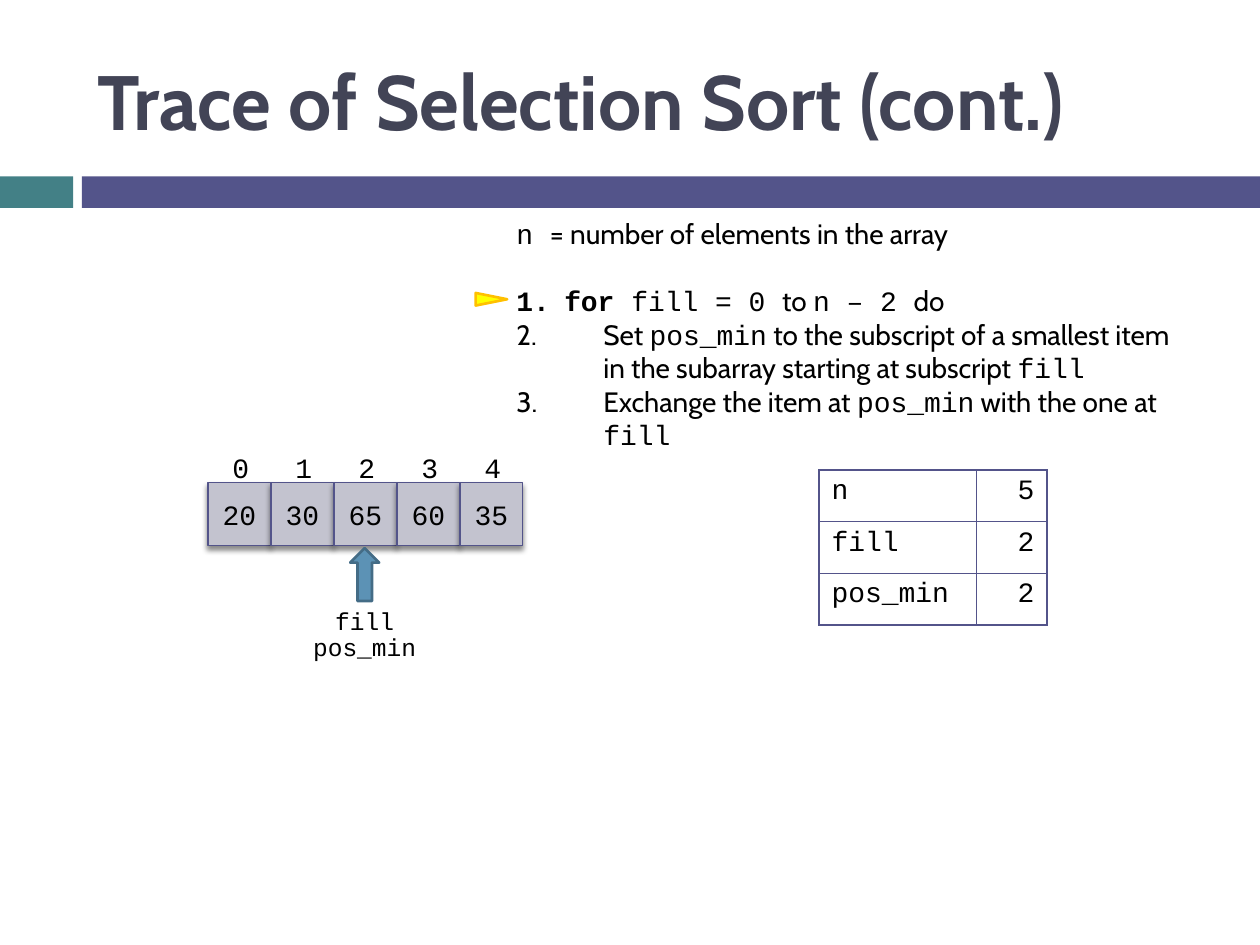
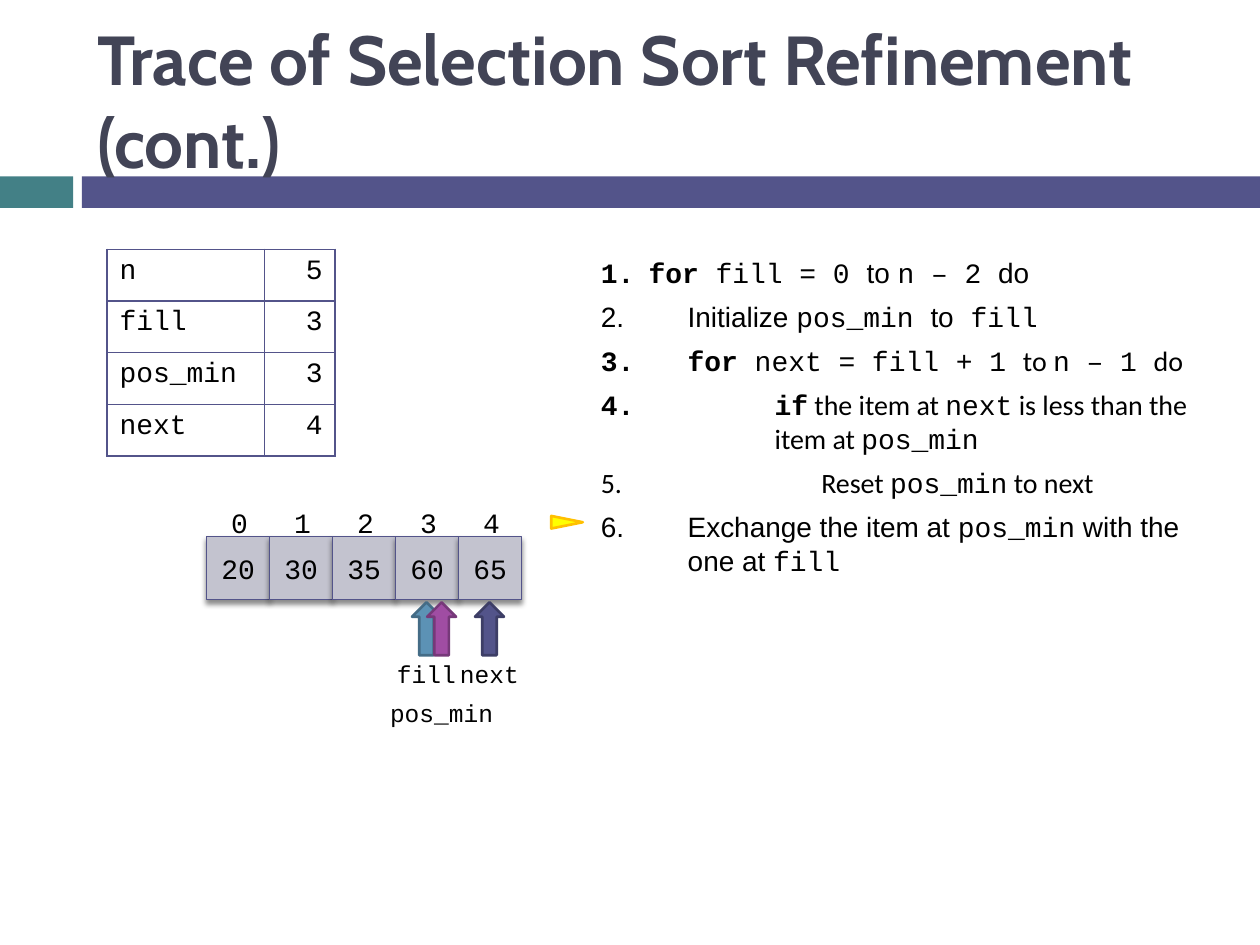
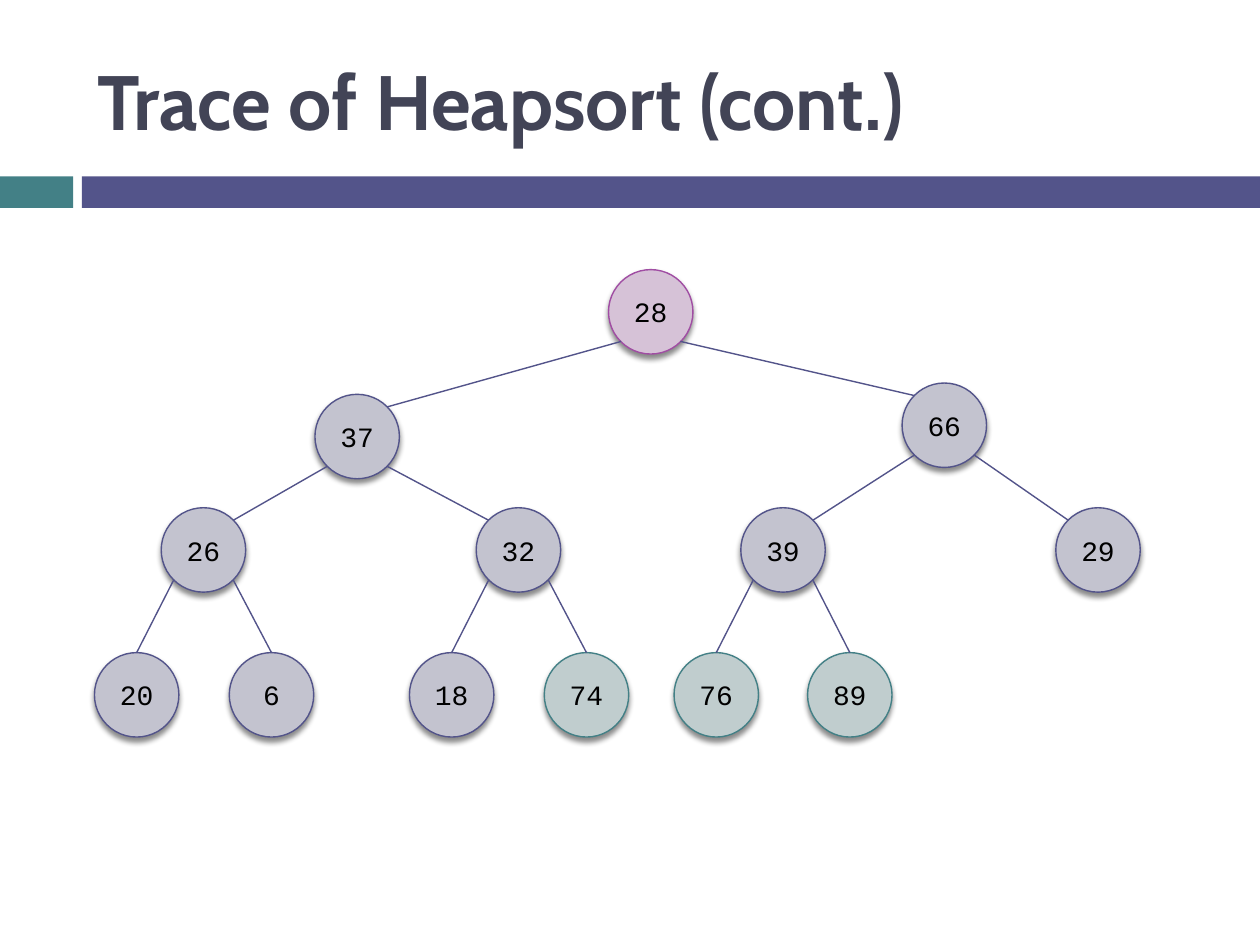
import lxml.etree
import pptx
import pptx.dml.color
import pptx.enum.shapes
import pptx.enum.text
import pptx.oxml.ns
import pptx.util

RGBColor = pptx.dml.color.RGBColor
BLACK = RGBColor(0x00, 0x00, 0x00)
TITLE_COLOR = RGBColor(0x42, 0x44, 0x56)
INDIGO = RGBColor(0x53, 0x54, 0x8A)
INDIGO_DARK = RGBColor(0x3D, 0x3E, 0x66)
INDIGO_PALE = RGBColor(0xC3, 0xC3, 0xCF)
TEAL = RGBColor(0x43, 0x80, 0x86)
TEAL_PALE = RGBColor(0xC0, 0xCD, 0xCE)
PURPLE = RGBColor(0xA0, 0x4D, 0xA3)
PURPLE_DARK = RGBColor(0x76, 0x39, 0x79)
PURPLE_PALE = RGBColor(0xD6, 0xC2, 0xD7)
BLUE = RGBColor(0x5C, 0x92, 0xB5)
BLUE_DARK = RGBColor(0x44, 0x6C, 0x86)
YELLOW = RGBColor(0xFF, 0xFF, 0x00)
AMBER = RGBColor(0xFF, 0xC0, 0x00)

MONO = "Courier New"
THIN, THICK = 0.79, 1.5
CELL = 0.5
NODE = 0.67

Inches, Pt = pptx.util.Inches, pptx.util.Pt
qn = pptx.oxml.ns.qn
SHAPE = pptx.enum.shapes.MSO_SHAPE
ALIGN = pptx.enum.text.PP_ALIGN
MIDDLE = pptx.enum.text.MSO_ANCHOR.MIDDLE


def write(p, text, align=ALIGN.LEFT, size=16, prose=MONO):
    """Fill a paragraph; every second piece between bars is code."""
    p.alignment = align
    for i, piece in enumerate(text.split("|")):
        if piece:
            r = p.add_run()
            r.text = piece
            r.font.name = MONO if i % 2 else prose
            r.font.size = Pt(size)
            r.font.bold = piece in ("for", "if")
            r.font.color.rgb = BLACK


def add_box(slide, kind, at, fill, line=None, width=THIN, text=""):
    """Add a preset shape; one with text is centred and casts a soft shadow."""
    sp = slide.shapes.add_shape(kind, *[Inches(v) for v in at])
    sp.shadow.inherit = False
    sp.fill.solid()
    sp.fill.fore_color.rgb = fill
    if line is None:
        sp.line.fill.background()
    else:
        sp.line.color.rgb = line
        sp.line.width = Pt(width)
    if text:
        tf = sp.text_frame
        tf.margin_left = tf.margin_right = tf.margin_top = tf.margin_bottom = 0
        tf.vertical_anchor = MIDDLE
        write(tf.paragraphs[0], text, ALIGN.CENTER)
        effects = sp.element.spPr.find(qn("a:effectLst"))
        shadow = lxml.etree.SubElement(effects, qn("a:outerShdw"), blurRad=str(Pt(3)),
                                       dist=str(Pt(2.4)), dir="5400000", rotWithShape="0")
        color = lxml.etree.SubElement(shadow, qn("a:srgbClr"), val="000000")
        lxml.etree.SubElement(color, qn("a:alpha"), val="45000")
    return sp


prs = pptx.Presentation()
prs.slide_width, prs.slide_height = Inches(10), Inches(7.5)
layout = prs.slide_layouts[5]

# Titles
slides = []
for title, size in (("Trace of Selection Sort (cont.)", 44),
                    ("Trace of Selection Sort Refinement (cont.)", 39.6),
                    ("Trace of Heapsort (cont.)", 44)):
    slide = prs.slides.add_slide(layout)
    sp = slide.shapes.title
    sp.left, sp.top, sp.width, sp.height = [Inches(v) for v in (0.67, 0.25, 8.92, 1.08)]
    tf = sp.text_frame
    tf.text = title
    tf.auto_size = pptx.enum.text.MSO_AUTO_SIZE.NONE
    tf.vertical_anchor = MIDDLE
    p = tf.paragraphs[0]
    p.alignment = ALIGN.LEFT
    font = p.runs[0].font
    font.name, font.size, font.bold = "Cabin", Pt(size), True
    font.color.rgb = TITLE_COLOR
    slides.append(slide)

# Bands under the title, kept on the shared layout
for number, (left, width, color) in enumerate(((0, 0.58, TEAL), (0.65, 9.35, INDIGO))):
    band = add_box(slides[0], SHAPE.RECTANGLE, (left, 1.4, width, 0.25), color)
    band.element.nvSpPr.cNvPr.set("id", str(20 + number))
    layout.shapes.element.insert(2 + number, band.element)

# Selection sort: steps are (indent, prose font, text)
# pointers are (name, centre in cells, label drop, fill, line)
traces = [
    {"steps_at": (4, 1.67, 5.58, 1.99), "space": 0,
     "steps": [
         (0, "Cabin", "|n |= number of elements in the array"),
         (0.38, "Cabin", "|for|| fill = 0 |to |n – 2 |do"),
         (0.69, "Cabin", "Set |pos_min| to the subscript of a smallest item in the "
                         "subarray starting at subscript |fill"),
         (0.69, "Cabin", "Exchange the item at |pos_min| with the one at |fill")],
     "marker": (3.85, 2.25),
     "array_at": (1.65, 3.83), "values": (20, 30, 65, 60, 35),
     "pointers": [("fill", 2.5, 0.93, BLUE, BLUE_DARK),
                  ("pos_min", 2.5, 1.14, None, None)],
     "table_at": (6.5, 3.73),
     "variables": (("n", 5), ("fill", 2), ("pos_min", 2))},
    {"steps_at": (4.67, 1.98, 5.17, 3.03), "space": 6,
     "steps": [
         (0.38, "Arial", "|for|| fill = 0 |to |n – 2 |do"),
         (0.69, "Arial", "Initialize |pos_min |to| fill"),
         (0.69, "Calibri", "|for|| next = fill + 1 |to |n – 1 |do"),
         (1.38, "Calibri", "|if| the item at |next| is less than the item at |pos_min"),
         (1.75, "Calibri", "Reset |pos_min| to next"),
         (0.69, "Arial", "Exchange the item at |pos_min| with the one at |fill")],
     "marker": (4.45, 4.02),
     "array_at": (1.64, 4.26), "values": (20, 30, 35, 60, 65),
     "pointers": [("fill", 3.5, 0.92, BLUE, BLUE_DARK),
                  ("pos_min", 3.74, 1.23, PURPLE, PURPLE_DARK),
                  ("next", 4.5, 0.92, INDIGO, INDIGO_DARK)],
     "table_at": (0.85, 1.98),
     "variables": (("n", 5), ("fill", 3), ("pos_min", 3), ("next", 4))},
]

for slide, trace in zip(slides, traces):
    # Numbered steps
    tf = slide.shapes.add_textbox(*[Inches(v) for v in trace["steps_at"]]).text_frame
    tf.word_wrap = True
    for i, (indent, prose, text) in enumerate(trace["steps"]):
        p = tf.add_paragraph() if i else tf.paragraphs[0]
        write(p, text, prose=prose)
        p.space_after = Pt(trace["space"] if indent else 19)
        if indent:
            pPr = p._p.get_or_add_pPr()
            pPr.set("marL", str(Inches(indent)))
            pPr.set("indent", str(-Inches(indent)))
            lxml.etree.SubElement(pPr, qn("a:buFont"), typeface="+mj-lt")
            lxml.etree.SubElement(pPr, qn("a:buAutoNum"), type="arabicPeriod")

    # Marker of the current step
    marker = add_box(slide, SHAPE.ISOSCELES_TRIANGLE, (*trace["marker"], 0.1, 0.25),
                     YELLOW, AMBER, THICK)
    marker.rotation = 90

    # Array cells and pointer arrows; labels are (text, left, top, width, height, size)
    left, top = trace["array_at"]
    labels = []
    for i, value in enumerate(trace["values"]):
        x = left + i * CELL
        add_box(slide, SHAPE.RECTANGLE, (x, top, CELL, CELL), INDIGO_PALE, INDIGO,
                text=str(value))
        labels.append((str(i), x + 0.02, top - 0.3, 0.48, 0.37, 16))
    for name, column, drop, fill, line in trace["pointers"]:
        x = left + column * CELL
        if fill is not None:
            add_box(slide, SHAPE.UP_ARROW, (x - 0.12, top + 0.52, 0.23, 0.42),
                    fill, line, THICK)
        labels.append((name, x - 0.54, top + drop, 1.07, 0.34, 14))
    for text, *at, size in labels:
        tf = slide.shapes.add_textbox(*[Inches(v) for v in at]).text_frame
        tf.word_wrap = True
        write(tf.paragraphs[0], text, ALIGN.CENTER, size)

    # Table of variables
    variables = trace["variables"]
    x, y = trace["table_at"]
    table = slide.shapes.add_table(len(variables), 2, Inches(x), Inches(y), Inches(1.81),
                                   Inches(0.41 * len(variables))).table
    table.first_row = table.horz_banding = False
    table.columns[0].width, table.columns[1].width = Inches(1.25), Inches(0.56)
    for row, pair in enumerate(variables):
        for col, value in enumerate(pair):
            cell = table.cell(row, col)
            write(cell.text_frame.paragraphs[0], str(value),
                  ALIGN.RIGHT if col else ALIGN.LEFT)
            cell.fill.background()
            tcPr = cell._tc.get_or_add_tcPr()
            for i, side in enumerate(("a:lnL", "a:lnR", "a:lnT", "a:lnB")):
                ln = lxml.etree.Element(qn(side), w=str(Pt(1)))
                solid = lxml.etree.SubElement(ln, qn("a:solidFill"))
                lxml.etree.SubElement(solid, qn("a:srgbClr"), val=str(INDIGO))
                tcPr.insert(i, ln)

# Heap in level order: (value, left, top); node i hangs from node (i - 1) // 2
heap = [
    (28, 4.83, 2.14),
    (37, 2.5, 3.13), (66, 7.16, 3.04),
    (26, 1.28, 4.03), (32, 3.78, 4.03), (39, 5.88, 4.03), (29, 8.38, 4.03),
    (20, 0.75, 5.18), (6, 1.82, 5.18), (18, 3.25, 5.18), (74, 4.32, 5.18),
    (76, 5.35, 5.18), (89, 6.41, 5.18),
]
slide = slides[2]
for i, (value, x, y) in enumerate(heap):
    if i == 0:
        fill, line = PURPLE_PALE, PURPLE
    elif i >= 10:  # already sorted
        fill, line = TEAL_PALE, TEAL
    else:
        fill, line = INDIGO_PALE, INDIGO
    add_box(slide, SHAPE.OVAL, (x, y, NODE, NODE), fill, line, text=str(value))

# Edges leave the parent diagonally; they reach the bottom row at the top
near, far = 0.15 * NODE, 0.85 * NODE
for i, (value, x, y) in enumerate(heap[1:], start=1):
    parent, px, py = heap[(i - 1) // 2]
    is_left = i % 2 == 1
    start = (px + (near if is_left else far), py + far)
    if i >= 7:
        end = (x + NODE / 2, y)
    else:
        end = (x + (far if is_left else near), y + near)
    edge = slide.shapes.add_connector(pptx.enum.shapes.MSO_CONNECTOR.STRAIGHT,
                                      *[Inches(v) for v in start + end])
    edge.line.color.rgb = INDIGO
    edge.line.width = Pt(THIN)
    lxml.etree.SubElement(edge.element.spPr, qn("a:effectLst"))

prs.save("out.pptx")
